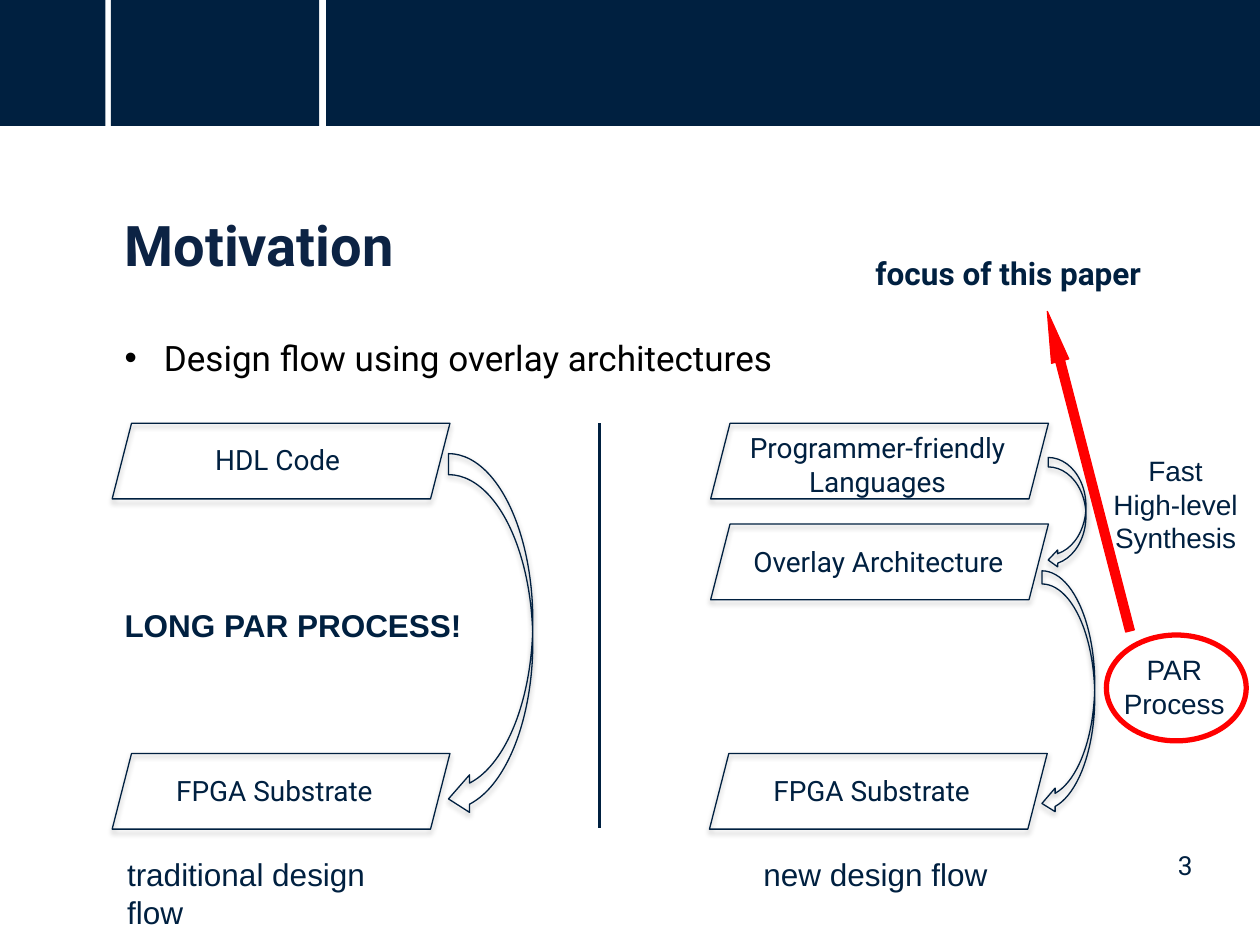
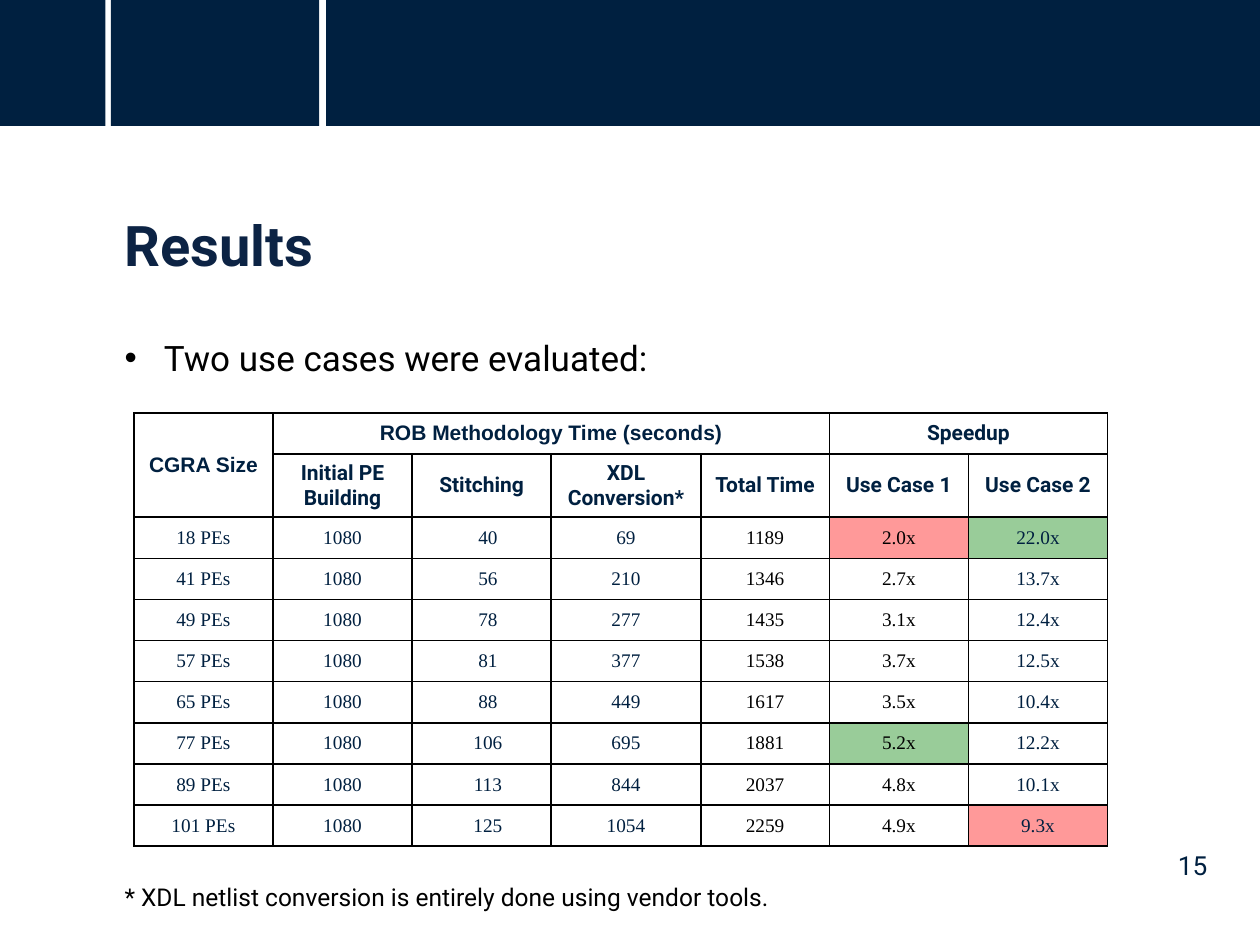
from lxml import etree
from pptx import Presentation
from pptx.dml.color import RGBColor
from pptx.enum.shapes import MSO_CONNECTOR, MSO_SHAPE
from pptx.enum.text import MSO_ANCHOR, PP_ALIGN
from pptx.oxml.ns import qn
from pptx.util import Pt

RECT = MSO_SHAPE.RECTANGLE
SLANT = MSO_SHAPE.PARALLELOGRAM
CURVE = MSO_SHAPE.CURVED_LEFT_ARROW
ARROW = MSO_SHAPE.RIGHT_ARROW
OVAL = MSO_SHAPE.OVAL
LINE = MSO_CONNECTOR.STRAIGHT
LEFT, CENTER = PP_ALIGN.LEFT, PP_ALIGN.CENTER
MIDDLE = MSO_ANCHOR.MIDDLE

COLORS = {
    "navy": "002040",
    "ink": "001F3F",
    "title": "0C2344",
    "black": "000000",
    "red": "FF0000",
    "green": "008000",
}


def add(node, tag, **attrs):
    child = etree.SubElement(node, qn(tag))
    for key, value in attrs.items():
        child.set(key, str(value))
    return child


class Deck:
    sans, plain, serif = "Roboto", "Arial", "Times New Roman"
    bands = ((0, 60.3), (63.4, 119), (186.4, 533.6))

    def __init__(self):
        self.prs = Presentation()
        self.prs.slide_width, self.prs.slide_height = Pt(720), Pt(540)
        self.slide = None

    def color(self, name):
        return RGBColor.from_string(COLORS[name])

    def style(self, para, size, font, color="navy", bold=False, align=LEFT):
        para.alignment = align
        for run in para.runs:
            run.font.size = Pt(size)
            run.font.name = font
            run.font.bold = bold
            run.font.color.rgb = self.color(color)

    def start(self, title, number):
        self.slide = self.prs.slides.add_slide(self.prs.slide_layouts[6])
        for left, width in self.bands:
            self.shape(RECT, (left, 0, width, 72), fill="navy")
        frame = self.text((64.1, 113.8, 595.4, 42.5), title, 32, self.sans,
                          "title", True)
        frame.margin_top = Pt(6.2)
        self.text((666, 481.7, 34, 25.2), number, 15, self.sans)

    def text(self, box, words, size, font, color="navy", bold=False, align=LEFT):
        frame = self.slide.shapes.add_textbox(*map(Pt, box)).text_frame
        frame.word_wrap = True
        frame.text = words
        for para in frame.paragraphs:
            self.style(para, size, font, color, bold, align)
        return frame

    def body(self, height, words, note=None):
        frame = self.text((64.1, 174.2, 595.4, height), words, 20, self.sans, "black")
        frame.margin_top = Pt(6)
        para = frame.paragraphs[0]
        props = para._p.get_or_add_pPr()
        props.set("marL", str(Pt(22.5)))
        props.set("indent", str(Pt(-22.5)))
        add(props, "a:buFont", typeface="Arial")
        add(props, "a:buChar", char="•")
        para.line_spacing = 1.5
        if note:
            para = frame.add_paragraph()
            para.text = note
            para.space_before = Pt(288)
            self.style(para, 14, self.sans, "black")

    def shape(self, kind, box, fill=None, line=None, width=0.75, turn=0,
              adjust=(), shade=False):
        item = self.slide.shapes.add_shape(kind, *map(Pt, box))
        item.shadow.inherit = False
        item.rotation = turn
        for i, value in enumerate(adjust):
            item.adjustments[i] = value
        if fill:
            item.fill.solid()
            item.fill.fore_color.rgb = self.color(fill)
        else:
            item.fill.background()
        if line:
            item.line.color.rgb = self.color(line)
            item.line.width = Pt(width)
        else:
            item.line.fill.background()
        if shade:
            effects = item._element.spPr.find(qn("a:effectLst"))
            shadow = add(effects, "a:outerShdw", blurRad=Pt(3.1), dist=Pt(1.8),
                         dir=5400000, rotWithShape=0)
            tint = add(shadow, "a:srgbClr", val=COLORS["black"])
            add(tint, "a:alpha", val=35000)

    def step(self, left, top):
        self.shape(SLANT, (left, top, 193, 43.2), line="navy",
                   adjust=(0.256,), shade=True)

    def curve(self, *box):
        self.shape(CURVE, box, line="ink", adjust=(0.25, 0.446, 0.25), shade=True)

    def rule(self, x, top, end):
        item = self.slide.shapes.add_connector(LINE, Pt(x), Pt(top), Pt(x), Pt(end))
        item.line.color.rgb = self.color("navy")
        item.line.width = Pt(2)
        add(item._element.spPr, "a:effectLst")

    def cell(self, cell, fill):
        cell.vertical_anchor = MIDDLE
        props = cell._tc.get_or_add_tcPr()
        if fill:
            cell.fill.solid()
            cell.fill.fore_color.rgb = self.color(fill)
            add(props.find(".//" + qn("a:srgbClr")), "a:alpha", val=40000)
        else:
            cell.fill.background()
        for i, side in enumerate("LRTB"):
            edge = add(props, "a:ln" + side, w=Pt(1))
            add(add(edge, "a:solidFill"), "a:srgbClr", val=COLORS["black"])
            props.insert(i, edge)

    def table(self, spot, widths, heights, rows, spans, fills):
        box = (*spot, sum(widths), sum(heights))
        frame = self.slide.shapes.add_table(len(rows), len(widths), *map(Pt, box))
        grid = frame.table
        grid.first_row = grid.horz_banding = False
        for col, width in zip(grid.columns, widths):
            col.width = Pt(width)
        for row, height in zip(grid.rows, heights):
            row.height = Pt(height)
        for r, row in enumerate(rows):
            for c, words in enumerate(row):
                cell = grid.cell(r, c)
                self.cell(cell, fills.get((r, c)))
                cell.text = words
                para = cell.text_frame.paragraphs[0]
                if r < 2:
                    font = self.plain if r == 0 and c < 2 else self.sans
                    self.style(para, 12, font, bold=True, align=CENTER)
                else:
                    color = "black" if c in (4, 5) else "navy"
                    self.style(para, 11, self.serif, color, align=CENTER)
                    cell.margin_left = cell.margin_right = Pt(5)
                    cell.margin_top = cell.margin_bottom = 0
                    shift = {1: -7.2, 2: 7.2}.get(c, 0)
                    para._p.get_or_add_pPr().set("indent", str(Pt(shift)))
        for first, last in spans:
            grid.cell(*first).merge(grid.cell(*last))


def flows(deck):
    deck.start("Motivation", "3")
    deck.body(334.8, "Design flow using overlay architectures")
    old, new = 64.1, 406.1
    top, mid, low = 241.9, 299.5, 430.6
    for spot in ((old, top), (old, low), (new, top), (new, mid), (new - 0.7, low)):
        deck.step(*spot)
    for left, y, width, words in (
        (115.9, 249.1, 90, "HDL Code"),
        (93.6, 438.5, 132, "FPGA Substrate"),
        (434.9, 438.5, 132, "FPGA Substrate"),
        (423.4, 307.4, 160, "Overlay Architecture"),
    ):
        deck.text((left, y, width, 26.6), words, 16, deck.sans)
    deck.text((411.1, 242.6, 180.7, 46), "Programmer-friendly Languages", 16,
              deck.sans, align=CENTER)
    deck.text((64.1, 342.7, 209, 28.8), "LONG PAR PROCESS!", 18, deck.plain, bold=True)
    deck.text((65.5, 485.3, 184, 28.8), "traditional design flow", 18, deck.plain)
    deck.text((429.1, 485.3, 145.4, 28.8), "new design flow", 18, deck.plain)
    deck.rule(342.7, top, 473)
    deck.curve(256.3, 259.2, 48.2, 208.1)
    deck.curve(599, 261.4, 21.6, 63.4)
    deck.curve(595.4, 326.2, 30.2, 139.7)
    deck.text((626.4, 255.6, 90.7, 65.5), "Fast\nHigh-level Synthesis", 16,
              deck.plain, align=CENTER)
    deck.text((625.7, 369.4, 90.7, 46), "PAR Process", 16, deck.plain, align=CENTER)
    deck.shape(OVAL, (632.2, 362.9, 79.9, 60.5), line="red", width=3)
    deck.shape(ARROW, (527.8, 264.2, 188.6, 10.1), fill="red", line="red",
               turn=255.5, adjust=(0.5, 2.9))
    deck.text((493.2, 141.8, 177.1, 28.8), "focus of this paper", 18, deck.sans,
              bold=True)


def results(deck):
    deck.start("Results", "15")
    deck.body(350.6, "Two use cases were evaluated:",
              "* XDL netlist conversion is entirely done using vendor tools.")
    heads = [
        ["CGRA Size", "ROB Methodology Time (seconds)", "", "", "", "Speedup", ""],
        ["", "Initial PE Building", "Stitching", "XDL Conversion*", "Total Time",
         "Use Case 1", "Use Case 2"],
    ]
    data = (
        (18, 40, 69, 1189, 2.0, 22.0),
        (41, 56, 210, 1346, 2.7, 13.7),
        (49, 78, 277, 1435, 3.1, 12.4),
        (57, 81, 377, 1538, 3.7, 12.5),
        (65, 88, 449, 1617, 3.5, 10.4),
        (77, 106, 695, 1881, 5.2, 12.2),
        (89, 113, 844, 2037, 4.8, 10.1),
        (101, 125, 1054, 2259, 4.9, 9.3),
    )
    rows = heads + [
        [f"{size} PEs", "1080", str(stitch), str(xdl), str(total),
         f"{one}x", f"{two}x"]
        for size, stitch, xdl, total, one, two in data
    ]
    deck.table(
        (76.5, 236),
        [79.5] * 3 + [85.5, 73.5] + [79.5] * 2,
        [23.5, 35.3] + [23.5] * len(data),
        rows,
        (((0, 0), (1, 0)), ((0, 1), (0, 4)), ((0, 5), (0, 6))),
        {(2, 5): "red", (2, 6): "green", (7, 5): "green", (9, 6): "red"},
    )


def main():
    deck = Deck()
    flows(deck)
    results(deck)
    deck.prs.save("out.pptx")


if __name__ == "__main__":
    main()
